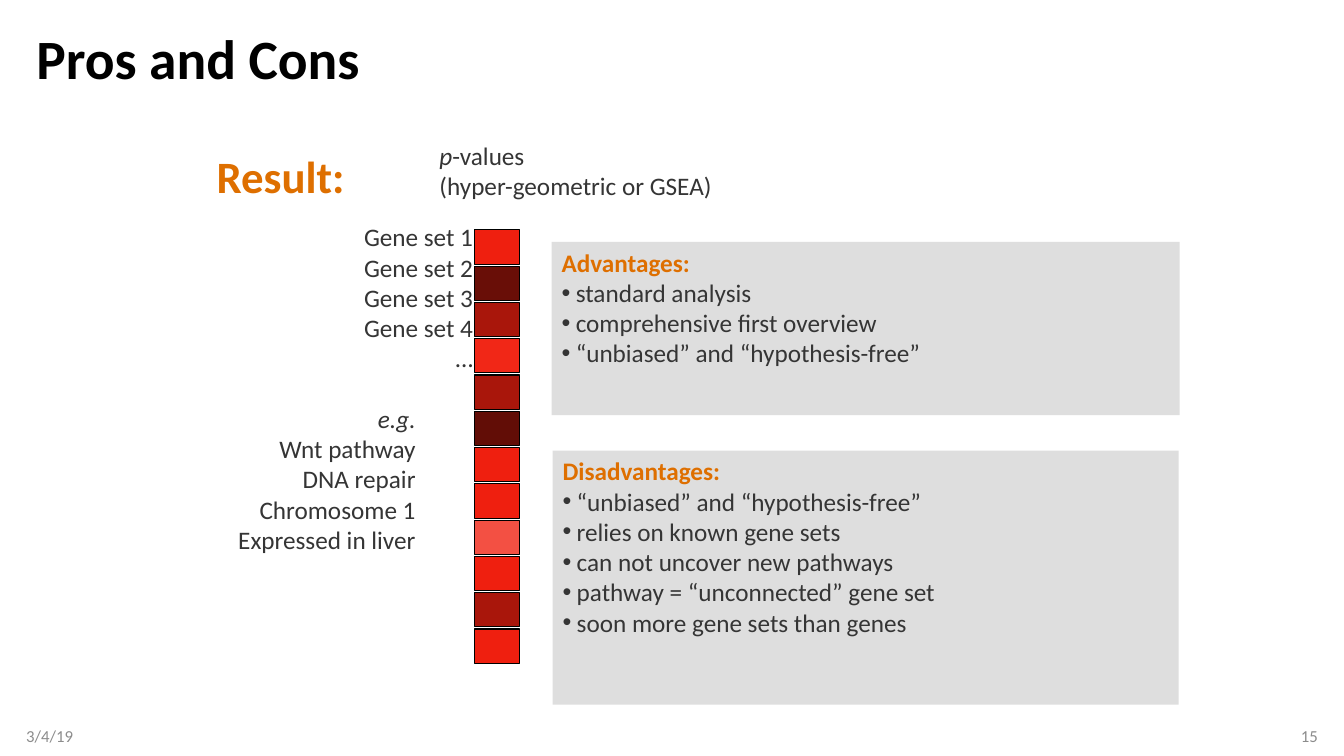
import pptx
import pptx.dml.color
import pptx.enum.shapes
import pptx.enum.text
import pptx.util
import lxml.etree

FONT = "Calibri"
DARK, ORANGE, GRAY, PANEL = "353535", "DE6F00", "8C8C8C", "DEDEDE"
ALIGN = pptx.enum.text.PP_ALIGN
ANCHOR = pptx.enum.text.MSO_ANCHOR


def color(hex_code):
    return pptx.dml.color.RGBColor.from_string(hex_code)


class SlideBuilder:
    """Holds the style and the slide; every place is in percent of the slide."""

    def __init__(self, deck, layout):
        self.deck = deck
        self.page = deck.slides.add_slide(layout)

    def place(self, left, top, width, height):
        across, down = self.deck.slide_width / 100, self.deck.slide_height / 100
        return [round(left * across), round(top * down),
                round(width * across), round(height * down)]

    def move(self, box, area):
        box.left, box.top, box.width, box.height = self.place(*area)

    def add_run(self, para, text, size=18, hex_code=DARK, bold=False, italic=False):
        span = para.add_run()
        span.text = text
        font = span.font
        font.name, font.size = FONT, pptx.util.Pt(size)
        font.bold, font.italic = bold, italic
        font.color.rgb = color(hex_code)

    def next_para(self, frame, first, align=ALIGN.LEFT):
        para = frame.paragraphs[0] if first else frame.add_paragraph()
        para.alignment = align
        return para

    def title(self, text, area):
        box = self.page.shapes.title
        self.move(box, area)
        frame = box.text_frame
        frame.auto_size = pptx.enum.text.MSO_AUTO_SIZE.NONE
        frame.vertical_anchor = ANCHOR.MIDDLE
        para = self.next_para(frame, True)
        para.line_spacing = 0.9
        self.add_run(para, text, 39.6, "000000", bold=True)

    def text(self, lines, area, align=ALIGN.LEFT, anchor=ANCHOR.TOP):
        """Each line is a list of (text, style) runs."""
        frame = self.page.shapes.add_textbox(*self.place(*area)).text_frame
        frame.word_wrap = True
        frame.vertical_anchor = anchor
        for index, line in enumerate(lines):
            para = self.next_para(frame, index == 0, align)
            for words, style in line:
                self.add_run(para, words, **style)
        return frame

    def bar(self, hex_code, area):
        box = self.page.shapes.add_shape(
            pptx.enum.shapes.MSO_SHAPE.RECTANGLE, *self.place(*area))
        box.shadow.inherit = False
        box.fill.solid()
        box.fill.fore_color.rgb = color(hex_code)
        box.line.color.rgb = color("000000")
        box.line.width = pptx.util.Pt(0.75)

    def set_bullet(self, para, char=None):
        hang = pptx.util.Inches(0.14) if char else 0
        props = para._p.get_or_add_pPr()
        props.set("marL", str(hang))
        props.set("indent", str(-hang))
        tag = pptx.oxml.ns.qn("a:buChar" if char else "a:buNone")
        bullet = lxml.etree.SubElement(props, tag)
        if char:
            bullet.set("char", char)

    def panel(self, box, heading, points, area):
        self.move(box, area)
        box.fill.solid()
        box.fill.fore_color.rgb = color(PANEL)
        frame = box.text_frame
        frame.auto_size = pptx.enum.text.MSO_AUTO_SIZE.NONE
        frame.vertical_anchor = ANCHOR.TOP
        for index, words in enumerate([heading] + points):
            is_heading = index == 0
            para = self.next_para(frame, is_heading)
            para.space_before = pptx.util.Pt(0)
            self.set_bullet(para, None if is_heading else "•")
            self.add_run(para, words, hex_code=ORANGE if is_heading else DARK,
                         bold=is_heading)


def main():
    deck = pptx.Presentation()
    deck.slide_width = pptx.util.Inches(13.33)
    deck.slide_height = pptx.util.Inches(7.5)
    builder = SlideBuilder(deck, deck.slide_layouts.get_by_name("Two Content"))

    # Title and footer
    builder.title("Pros and Cons", (1.95, 3.33, 96.1, 9.6))
    footer = {"size": 12, "hex_code": GRAY}
    date = builder.text([[("3/4/19", footer)]], (1.95, 94.67, 22.5, 5.33),
                        anchor=ANCHOR.MIDDLE)
    date.margin_left = 0
    number = builder.text([[("15", footer)]], (75.55, 94.67, 22.5, 5.33),
                          ALIGN.RIGHT, ANCHOR.MIDDLE)
    number.margin_right = 0

    # Headings of the result column
    builder.text([[("Result:", {"size": 32, "hex_code": ORANGE, "bold": True})]],
                 (15.38, 19.07, 11.63, 8.4))
    builder.text([[("p", {"italic": True}), ("-values", {})],
                  [("(hyper-geometric or GSEA)", {})]],
                 (31.96, 17.87, 29.33, 12))

    # Gene set labels, with the examples set apart below
    gene_sets = [f"Gene set {rank}" for rank in range(1, 5)] + ["…"]
    examples = ["Wnt pathway", "DNA repair", "Chromosome 1", "Expressed in liver"]
    lines = [[(name, {})] for name in gene_sets]
    lines.append([("e.g.", {"italic": True})])
    lines += [[(name, {})] for name in examples]
    labels = builder.text(lines, (14.48, 28.67, 21.46, 60.53), ALIGN.RIGHT)
    example_para = labels.paragraphs[len(gene_sets)]
    example_para.space_before = pptx.util.Pt(21.7)
    example_para._p.get_or_add_pPr().set("marR", str(pptx.util.Inches(0.57)))

    # Column of p-value colours
    bars = ["EF1F0F", "690E07", "A9160B", "F12717", "A9160B", "620D06",
            "EF1F0F", "EF1F0F", "F35043", "EF1F0F", "A9160B", "EF1F0F"]
    for row, hex_code in enumerate(bars):
        builder.bar(hex_code, (35.33, 30.4 + 4.8 * row, 3.3, 4.53))

    # Advantages and disadvantages
    pros, cons = list(builder.page.placeholders)[1:3]
    builder.panel(pros, "Advantages:",
                  ["standard analysis", "comprehensive first overview",
                   "“unbiased” and “hypothesis-free”"],
                  (41.04, 32, 46.74, 22.93))
    builder.panel(cons, "Disadvantages:",
                  ["“unbiased” and “hypothesis-free”", "relies on known gene sets",
                   "can not uncover new pathways",
                   "pathway = “unconnected” gene set",
                   "soon more gene sets than genes"],
                  (41.11, 59.6, 46.59, 33.6))

    deck.save("out.pptx")


if __name__ == "__main__":
    main()
